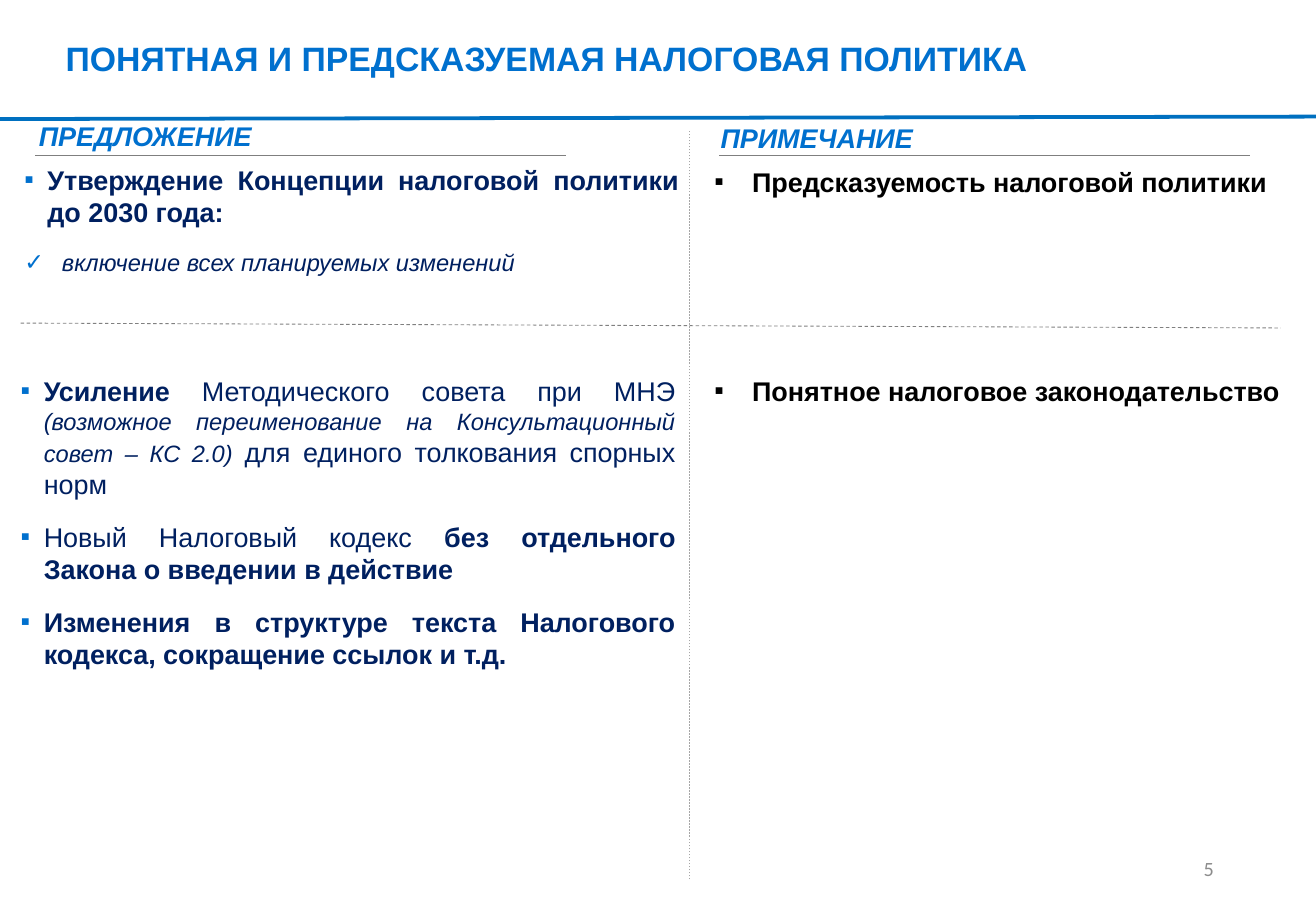
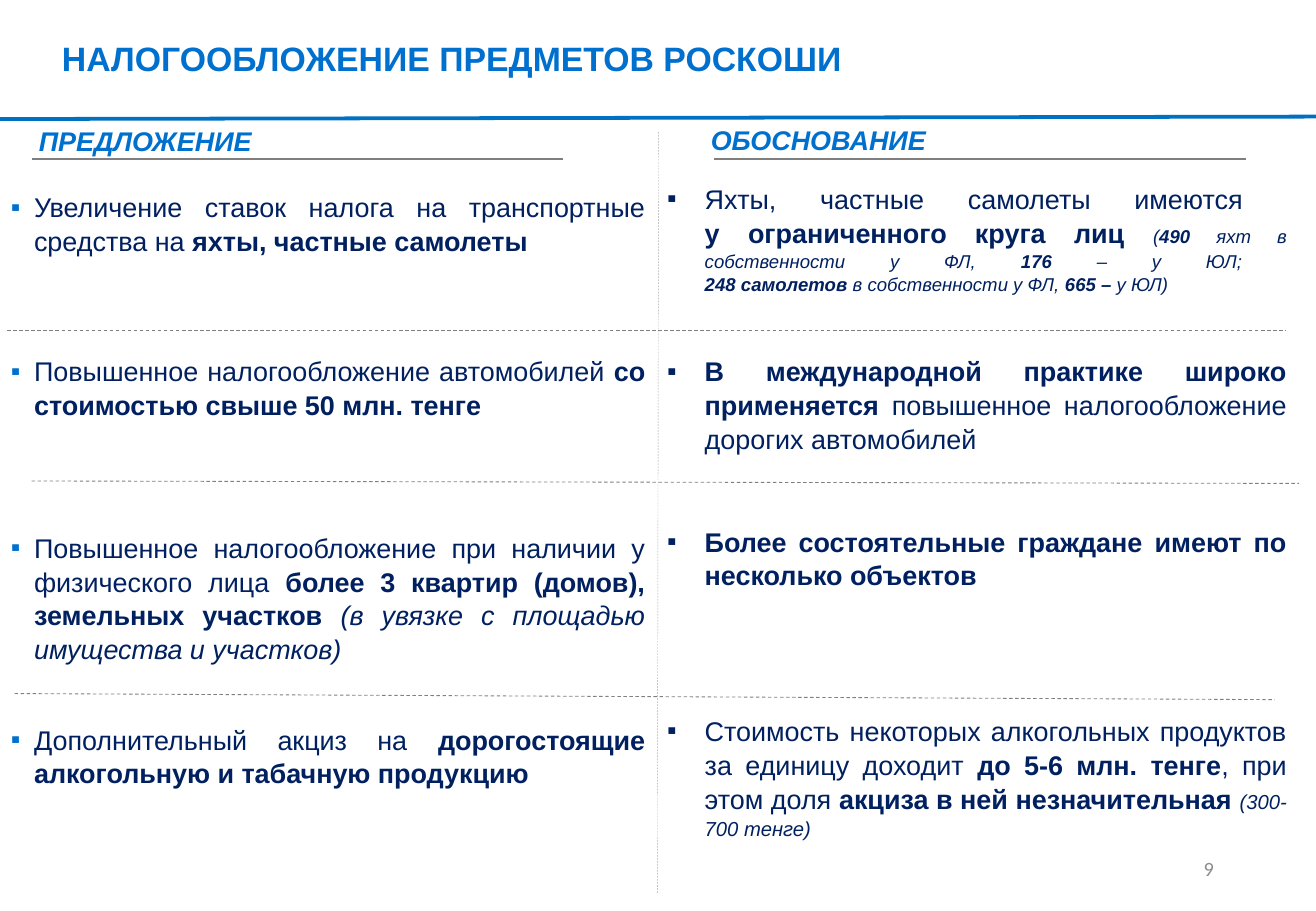
from lxml import etree
from pptx import Presentation
from pptx import util as u
from pptx.dml.color import RGBColor
from pptx.enum import dml, shapes, text
from pptx.oxml.ns import qn

PX = 9144
WIDTH, HEIGHT = 1083, 750
ACCENT, BAND, NAVY, BLACK = "0070CE", "0070C0", "002060", "000000"
RULE, SPLIT, DIVIDER, NUMBER = "7F7F7F", "A6A6A6", "808080", "8C8C8C"
TOP, MIDDLE, BOTTOM = (text.MSO_ANCHOR.TOP, text.MSO_ANCHOR.MIDDLE,
                       text.MSO_ANCHOR.BOTTOM)
JUSTIFY, RIGHT = text.PP_ALIGN.JUSTIFY, text.PP_ALIGN.RIGHT


def px(n):
    """Turn px into EMU."""
    return u.Emu(n * PX)


def color(value):
    """Turn a hex string into a colour."""
    return RGBColor.from_string(value)


def add_line(s, start, end, line_color, width, dashed=False):
    """Draw a straight line between two points."""
    sp = s.shapes.add_connector(shapes.MSO_CONNECTOR.STRAIGHT,
                                *map(px, (*start, *end)))
    sp.line.color.rgb = color(line_color)
    sp.line.width = u.Pt(width)
    if dashed:
        sp.line.dash_style = dml.MSO_LINE.DASH
    etree.SubElement(sp._element.spPr, qn("a:effectLst"))


def add_frame(s, at, anchor=TOP, insets=(0, 0, 0, 0)):
    """Add an empty wrapping text box and return its text frame."""
    tf = s.shapes.add_textbox(*map(px, at)).text_frame
    tf.word_wrap = True
    tf.vertical_anchor = anchor
    (tf.margin_left, tf.margin_top,
     tf.margin_right, tf.margin_bottom) = map(px, insets)
    return tf


def add_run(p, words, style="", size=16, ink=NAVY, font="Arial"):
    """Add a run, with line breaks where the words have them."""
    for i, part in enumerate(words.split("\n")):
        if i:
            p.add_line_break()
        if part:
            r = p.add_run()
            r.text = part
            r.font.name, r.font.size = font, u.Pt(size)
            r.font.bold, r.font.italic = "b" in style, "i" in style
            r.font.color.rgb = color(ink)


def add_label(s, at, words, style, size, ink, anchor=MIDDLE, align=None,
              font="Arial"):
    """Add a one-line text."""
    p = add_frame(s, at, anchor).paragraphs[0]
    p.alignment = align
    add_run(p, words, style, size, ink, font)


def set_bullet(p, char, ink, indent):
    """Give a paragraph a hanging bullet."""
    pPr = p._p.get_or_add_pPr()
    pPr.set("marL", str(px(indent)))
    pPr.set("indent", str(-px(indent)))
    clr = etree.SubElement(pPr, qn("a:buClr"))
    etree.SubElement(clr, qn("a:srgbClr"), val=ink)
    etree.SubElement(pPr, qn("a:buFont"), typeface="Arial")
    etree.SubElement(pPr, qn("a:buChar"), char=char)


def add_bullets(s, at, items, anchor=TOP, ink=NAVY, bullet=ACCENT, indent=19,
                after=0, spacing=1.0):
    """Add justified bulleted paragraphs, each a list of runs."""
    tf = add_frame(s, at, anchor)
    for i, runs in enumerate(items):
        p = tf.add_paragraph() if i else tf.paragraphs[0]
        p.alignment = JUSTIFY
        p.space_after = u.Pt(after)
        p.line_spacing = spacing
        check = runs[0][0].startswith("включение")
        set_bullet(p, "✓" if check else "▪", bullet, 31 if check else indent)
        for run in runs:
            add_run(p, *run, ink=ink)


def add_heading(s, at, words, rule_left, rule_top):
    """Add a column heading and the rule under it."""
    add_label(s, (*at, 437, 27), words, "bi", 16, ACCENT, BOTTOM)
    add_line(s, (rule_left, rule_top), (rule_left + 437, rule_top), RULE, 1)


def add_base(prs, title, title_left, number, split):
    """Add a slide with title, band, page number and column split."""
    s = prs.slides.add_slide(prs.slide_layouts[6])
    add_line(s, (0, 98), (WIDTH, 96), BAND, 2.25)
    add_label(s, (title_left, 28, 1020, 40), title, "b", 20, ACCENT)
    add_label(s, (775, 695, 224, 40), number, "", 12, NUMBER,
              align=RIGHT, font="Calibri")
    add_line(s, *split, SPLIT, 0.25, True)
    return s


def build_policy(prs):
    """Build the slide on tax policy."""
    s = add_base(prs, "ПОНЯТНАЯ И ПРЕДСКАЗУЕМАЯ НАЛОГОВАЯ ПОЛИТИКА", 54, "5",
                 ((567, 724), (567, 108)))
    add_heading(s, (32, 98), "ПРЕДЛОЖЕНИЕ", 29, 128)
    add_heading(s, (593, 100), "ПРИМЕЧАНИЕ", 592, 128)
    add_line(s, (17, 266), (1054, 270), DIVIDER, 0.5, True)
    add_bullets(s, (20, 134, 539, 94), [
        [("Утверждение Концепции налоговой политики до 2030 года:", "b")],
        [("включение всех планируемых изменений", "i", 14)],
    ], MIDDLE, after=12)
    add_bullets(s, (17, 307, 539, 246), [
        [("Усиление ", "b"), ("Методического совета при МНЭ ",),
         ("(возможное переименование на Консультационный совет – КС 2.0) ",
          "i", 14),
         ("для единого толкования спорных норм",)],
        [("Новый Налоговый кодекс ",),
         ("без отдельного Закона о введении в действие", "b")],
        [("Изменения в структуре текста Налогового кодекса, "
          "сокращение ссылок и т.д.", "b")],
    ], MIDDLE, after=12)
    for top, note in ((136, "Предсказуемость налоговой политики"),
                      (308, "Понятное налоговое законодательство")):
        add_bullets(s, (588, top, 467, 27), [[(note, "b")]],
                    ink=BLACK, bullet=BLACK, indent=31)


def build_luxury(prs):
    """Build the slide on luxury taxation."""
    s = add_base(prs, "НАЛОГООБЛОЖЕНИЕ ПРЕДМЕТОВ РОСКОШИ", 51, "9",
                 ((541, 735), (542, 108)))
    add_heading(s, (32, 102), "ПРЕДЛОЖЕНИЕ", 26, 131)
    add_heading(s, (585, 101), "ОБОСНОВАНИЕ", 588, 131)
    for start, end in (((6, 272), (1058, 272)), ((26, 396), (1069, 398)),
                       ((12, 571), (1049, 576))):
        add_line(s, start, end, DIVIDER, 0.5, True)
    proposals = (
        (156, [("Увеличение ставок налога на транспортные средства на ",),
               ("яхты, частные самолеты", "b")]),
        (291, [("Повышенное налогообложение автомобилей ",),
               ("со стоимостью свыше 50 млн. тенге", "b")]),
        (436, [("Повышенное налогообложение при наличии у физического лица ",),
               ("более 3 квартир (домов), земельных участков ", "b"),
               ("(в увязке с площадью имущества и участков)", "i")]),
        (594, [("Дополнительный акциз на ",),
               ("дорогостоящие алкогольную и табачную продукцию", "b")]),
    )
    reasons = (
        (149, [("Яхты, частные самолеты имеются \n",),
               ("у ограниченного круга лиц ", "b"), ("(", "i", 11),
               ("490", "bi", 11), (" яхт в собственности у ФЛ, ", "i", 11),
               ("176", "bi", 11), (" – у ЮЛ; \n", "i", 11),
               ("248 самолетов", "bi", 11),
               (" в собственности у ФЛ, ", "i", 11),
               ("665 – ", "bi", 11), ("у ЮЛ)", "i", 11)]),
        (291, [("В международной практике широко применяется ", "b"),
               ("повышенное налогообложение дорогих автомобилей",)]),
        (431, [("Более состоятельные граждане имеют по несколько объектов",
                "b")]),
        (587, [("Стоимость некоторых алкогольных продуктов за единицу "
                "доходит ",),
               ("до 5-6 млн. тенге", "b"), (", при этом доля ",),
               ("акциза в ней незначительная ", "b"),
               ("(300-700 тенге)", "i", 12)]),
    )
    for rows, left, width, bullet, indent in (
            (proposals, 9, 522, ACCENT, 19), (reasons, 549, 510, NAVY, 31)):
        for top, runs in rows:
            add_bullets(s, (left, top, width, 100), [runs], bullet=bullet,
                        indent=indent, spacing=1.05)


def main():
    """Build and save the presentation."""
    prs = Presentation()
    prs.slide_width, prs.slide_height = px(WIDTH), px(HEIGHT)
    build_policy(prs)
    build_luxury(prs)
    prs.save("out.pptx")


if __name__ == "__main__":
    main()
